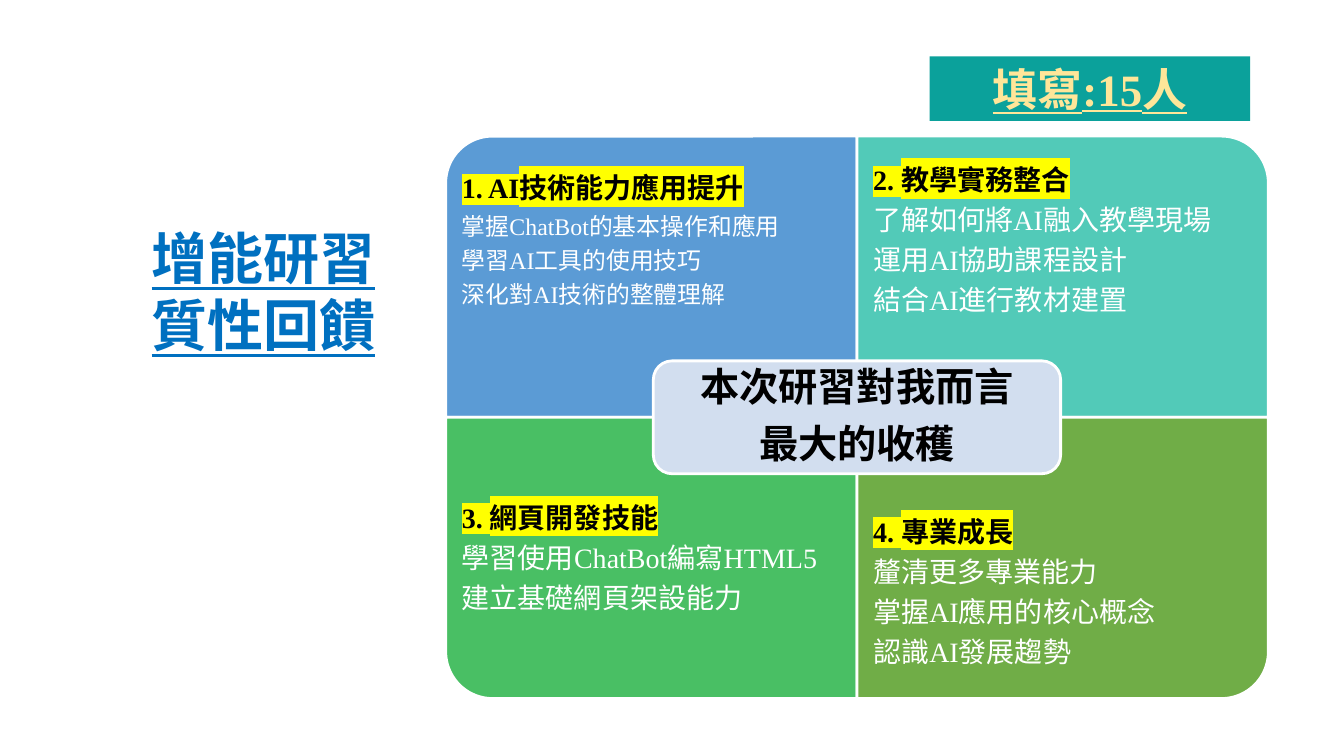
"""Build the training feedback slide with four takeaways around a centre label."""
from lxml import etree
from pptx import Presentation
from pptx.dml.color import RGBColor
from pptx.enum.shapes import MSO_SHAPE
from pptx.enum.text import MSO_ANCHOR, MSO_AUTO_SIZE, PP_ALIGN
from pptx.oxml.ns import qn
from pptx.util import Inches, Pt

RECT, ROUND, CORNER = MSO_SHAPE.RECTANGLE, MSO_SHAPE.ROUNDED_RECTANGLE, MSO_SHAPE.ROUND_1_RECTANGLE
TOP, MIDDLE = MSO_ANCHOR.TOP, MSO_ANCHOR.MIDDLE
LEFT, CENTER = PP_ALIGN.LEFT, PP_ALIGN.CENTER

FONT = "Times New Roman"
COLORS = {
    "white": "FFFFFF", "black": "000000", "title": "0070C0", "mark": "FFFF00",
    "teal": "0BA19B", "cream": "FFE699", "label": "D2DEEF", "blue": "5B9BD5",
    "mint": "52CAB8", "green": "49BF64", "olive": "70AD47",
}
TITLE = ["增能研習", "質性回饋"]
COUNT = ["填寫:15人"]
CORE = ["本次研習對我而言", "最大的收穫"]
PANELS = [
    ("blue", 270, 17, MIDDLE, "1. AI技術能力應用提升",
     ["掌握ChatBot的基本操作和應用", "學習AI工具的使用技巧", "深化對AI技術的整體理解"]),
    ("mint", 0, 20, MIDDLE, "2. 教學實務整合",
     ["了解如何將AI融入教學現場", "運用AI協助課程設計", "結合AI進行教材建置"]),
    ("green", 180, 20, TOP, "3. 網頁開發技能",
     ["學習使用ChatBot編寫HTML5", "建立基礎網頁架設能力"]),
    ("olive", 90, 20, MIDDLE, "4. 專業成長",
     ["釐清更多專業能力", "掌握AI應用的核心概念", "認識AI發展趨勢"]),
]
GRID_X, GRID_Y = 4.42, 1.35
WIDE, HIGH, TEXT_H = 4.08, 2.79, 2.09
CORE_W, CORE_H = 4.04, 1.12


def rgb(name):
    return RGBColor.from_string(COLORS[name])


def add_shape(slide, kind, box, fill, line=True):
    shape = slide.shapes.add_shape(kind, *map(Inches, box))
    shape.shadow.inherit = False
    shape.fill.solid()
    shape.fill.fore_color.rgb = rgb(fill)
    if line:
        shape.line.color.rgb = rgb("white")
        shape.line.width = Pt(2)
    else:
        shape.line.fill.background()
    return shape


def set_frame(frame, anchor, side, edge):
    frame.word_wrap = True
    frame.auto_size = MSO_AUTO_SIZE.NONE
    frame.vertical_anchor = anchor
    frame.margin_left = frame.margin_right = Inches(side)
    frame.margin_top = frame.margin_bottom = Inches(edge)


def add_lines(frame, lines, size, color, align=CENTER, bold=True, under=False,
              mark=False, tight=False, first=True):
    for i, text in enumerate(lines):
        para = frame.paragraphs[0] if first and i == 0 else frame.add_paragraph()
        para.alignment = align
        para.space_before = Pt(0)
        if tight:
            para.line_spacing = 0.9
            para.space_after = Pt(round(size * 0.35))
        run = para.add_run()
        run.text = text
        font = run.font
        font.name, font.size = FONT, Pt(size)
        font.bold, font.underline = bold, under
        font.color.rgb = rgb(color)
        if mark:
            light = etree.Element(qn("a:highlight"))
            etree.SubElement(light, qn("a:srgbClr")).set("val", COLORS["mark"])
            run.font._element.find(qn("a:solidFill")).addnext(light)


def add_panel(slide, index, panel):
    color, turn, size, anchor, head, lines = panel
    row, col = divmod(index, 2)
    x, y = GRID_X + col * WIDE, GRID_Y + row * HIGH
    w, h = (HIGH, WIDE) if turn % 180 else (WIDE, HIGH)
    box = (x + (WIDE - w) / 2, y + (HIGH - h) / 2, w, h)
    add_shape(slide, CORNER, box, color).rotation = turn
    top = y + row * (HIGH - TEXT_H)
    frame = slide.shapes.add_textbox(*map(Inches, (x, top, WIDE, TEXT_H))).text_frame
    set_frame(frame, anchor, 0.16, 0.16)
    add_lines(frame, [head], 20, "black", LEFT, mark=True, tight=True)
    add_lines(frame, lines, size, "white", LEFT, bold=False, tight=True, first=False)


def main():
    deck = Presentation()
    deck.slide_width, deck.slide_height = Inches(13.33), Inches(7.5)
    slide = deck.slides.add_slide(deck.slide_layouts[5])

    title = slide.shapes.title
    title.left, title.top, title.width, title.height = map(Inches, (0.68, 2.17, 3.87, 1.45))
    set_frame(title.text_frame, TOP, 0.1, 0.05)
    add_lines(title.text_frame, TITLE, 40, "title", under=True)

    badge = add_shape(slide, RECT, (9.22, 0.56, 3.18, 0.64), "teal", line=False)
    set_frame(badge.text_frame, TOP, 0.1, 0.05)
    add_lines(badge.text_frame, COUNT, 32, "cream", under=True)

    for index, panel in enumerate(PANELS):
        add_panel(slide, index, panel)

    box = (GRID_X + WIDE - CORE_W / 2, GRID_Y + HIGH - CORE_H / 2, CORE_W, CORE_H)
    core = add_shape(slide, ROUND, box, "label")
    set_frame(core.text_frame, MIDDLE, 0.12, 0.12)
    add_lines(core.text_frame, CORE, 28, "black", tight=True)

    deck.save("out.pptx")


if __name__ == "__main__":
    main()
